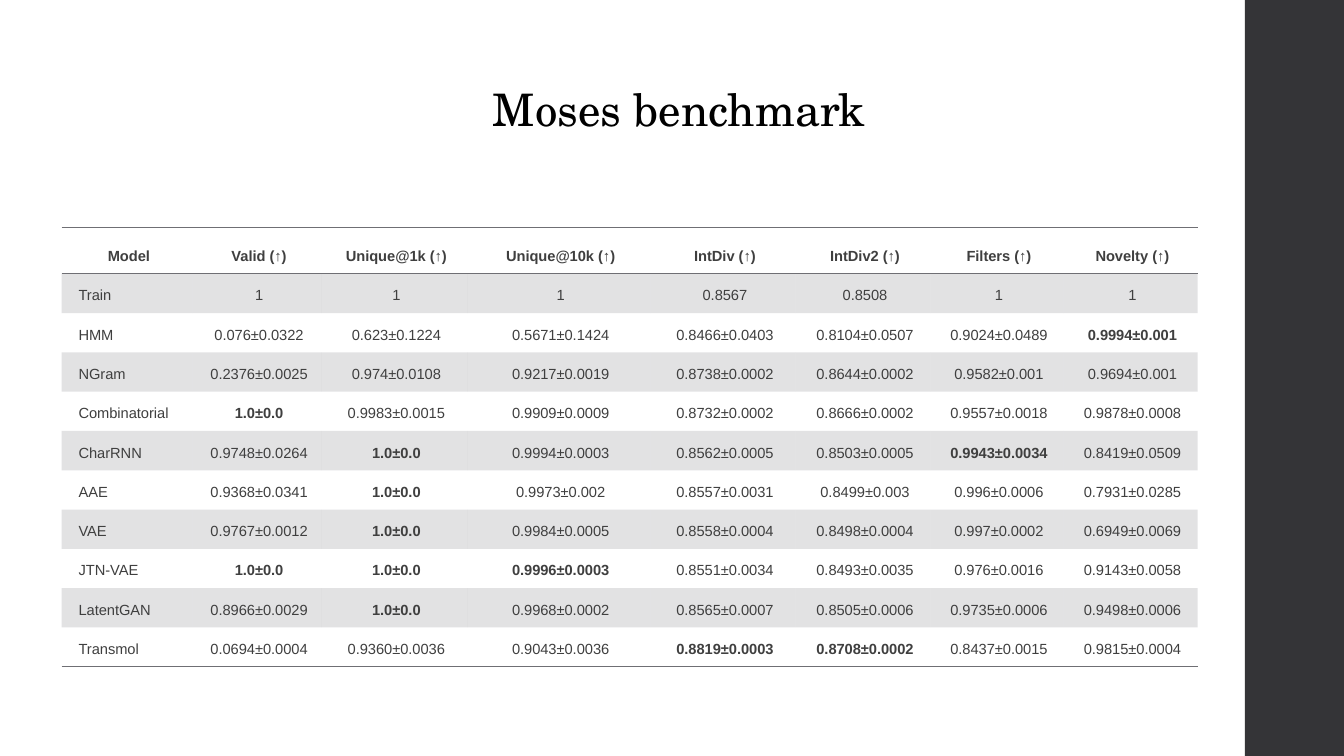
import lxml.etree
import pptx
import pptx.dml.color
import pptx.enum.shapes
import pptx.enum.text
import pptx.oxml.ns
import pptx.util

Cm = pptx.util.Cm
Pt = pptx.util.Pt
RGBColor = pptx.dml.color.RGBColor
PP_ALIGN = pptx.enum.text.PP_ALIGN
MSO_ANCHOR = pptx.enum.text.MSO_ANCHOR
qn = pptx.oxml.ns.qn

BLACK = RGBColor(0x00, 0x00, 0x00)
WHITE = RGBColor(0xFF, 0xFF, 0xFF)
CHARCOAL = RGBColor(0x34, 0x34, 0x37)
TEXT_GREY = RGBColor(0x3F, 0x3F, 0x3F)
RULE_GREY = RGBColor(0x6F, 0x6F, 0x74)
NO_STYLE_NO_GRID = "{2D5ABB26-0587-4C30-8999-92F81FD0307C}"

HEADINGS = ["Model", "Valid (↑)", "Unique@1k (↑)", "Unique@10k (↑)",
            "IntDiv (↑)", "IntDiv2 (↑)", "Filters (↑)", "Novelty (↑)"]
COLUMN_WIDTHS = [3.3, 3.26, 3.66, 4.62, 3.66, 3.4, 3.35, 3.38]

# A leading * marks a best score, set in bold
SCORES = [
    "Train 1 1 1 0.8567 0.8508 1 1",
    "HMM 0.076±0.0322 0.623±0.1224 0.5671±0.1424 0.8466±0.0403 0.8104±0.0507 0.9024±0.0489 *0.9994±0.001",
    "NGram 0.2376±0.0025 0.974±0.0108 0.9217±0.0019 0.8738±0.0002 0.8644±0.0002 0.9582±0.001 0.9694±0.001",
    "Combinatorial *1.0±0.0 0.9983±0.0015 0.9909±0.0009 0.8732±0.0002 0.8666±0.0002 0.9557±0.0018 0.9878±0.0008",
    "CharRNN 0.9748±0.0264 *1.0±0.0 0.9994±0.0003 0.8562±0.0005 0.8503±0.0005 *0.9943±0.0034 0.8419±0.0509",
    "AAE 0.9368±0.0341 *1.0±0.0 0.9973±0.002 0.8557±0.0031 0.8499±0.003 0.996±0.0006 0.7931±0.0285",
    "VAE 0.9767±0.0012 *1.0±0.0 0.9984±0.0005 0.8558±0.0004 0.8498±0.0004 0.997±0.0002 0.6949±0.0069",
    "JTN-VAE *1.0±0.0 *1.0±0.0 *0.9996±0.0003 0.8551±0.0034 0.8493±0.0035 0.976±0.0016 0.9143±0.0058",
    "LatentGAN 0.8966±0.0029 *1.0±0.0 0.9968±0.0002 0.8565±0.0007 0.8505±0.0006 0.9735±0.0006 0.9498±0.0006",
    "Transmol 0.0694±0.0004 0.9360±0.0036 0.9043±0.0036 *0.8819±0.0003 *0.8708±0.0002 0.8437±0.0015 0.9815±0.0004",
]


def write_text(frame, text, font="Arial", size=10.5, color=TEXT_GREY,
               bold=False, align=PP_ALIGN.CENTER, spacing=1.0):
    paragraph = frame.paragraphs[0]
    paragraph.alignment = align
    paragraph.line_spacing = spacing
    run = paragraph.add_run()
    run.text = text
    run.font.name = font
    run.font.size = Pt(size)
    run.font.bold = bold
    run.font.color.rgb = color


def add_rule(cell, edge):
    line = lxml.etree.Element(qn(f"a:{edge}"), w=str(Pt(1)))
    fill = lxml.etree.SubElement(line, qn("a:solidFill"))
    lxml.etree.SubElement(fill, qn("a:srgbClr"), val=str(RULE_GREY))
    cell._tc.get_or_add_tcPr().insert(0, line)


deck = pptx.Presentation()
deck.slide_width = Cm(33.87)
deck.slide_height = Cm(19.05)
slide = deck.slides.add_slide(deck.slide_layouts[6])
slide.background.fill.solid()
slide.background.fill.fore_color.rgb = WHITE

# Dark band on the right
side_band = slide.shapes.add_shape(pptx.enum.shapes.MSO_SHAPE.RECTANGLE,
                                   Cm(31.37), 0, Cm(2.5), deck.slide_height)
side_band.shadow.inherit = False
side_band.fill.solid()
side_band.fill.fore_color.rgb = CHARCOAL
side_band.line.fill.background()

# Title
title = slide.shapes.add_textbox(Cm(1.55), Cm(1.78), Cm(31.14), Cm(2.06)).text_frame
title.word_wrap = True
title.vertical_anchor = MSO_ANCHOR.MIDDLE
write_text(title, "Moses benchmark", font="TeX Gyre Schola", size=32,
           color=BLACK, spacing=0.9)

# Benchmark table
models = [line.split() for line in SCORES]
rows = [HEADINGS] + models
row_heights = [1.17] + [0.99] * len(models)
benchmark = slide.shapes.add_table(
    len(rows), len(HEADINGS), Cm(1.55), Cm(5.73),
    Cm(sum(COLUMN_WIDTHS)), Cm(sum(row_heights))).table
benchmark.horz_banding = False
benchmark._tbl.tblPr.find(qn("a:tableStyleId")).text = NO_STYLE_NO_GRID
for column, width in zip(benchmark.columns, COLUMN_WIDTHS):
    column.width = Cm(width)
for row, height in zip(benchmark.rows, row_heights):
    row.height = Cm(height)

for r, values in enumerate(rows):
    for c, value in enumerate(values):
        cell = benchmark.cell(r, c)
        cell.vertical_anchor = MSO_ANCHOR.BOTTOM
        cell.margin_left, cell.margin_right = Cm(0.43), Cm(0.33)
        cell.margin_top = cell.margin_bottom = Cm(0.23)
        is_name = r > 0 and c == 0
        write_text(cell.text_frame, value.lstrip("*"),
                   bold=r == 0 or value.startswith("*"),
                   align=PP_ALIGN.LEFT if is_name else PP_ALIGN.CENTER)

        # Every second row is tinted
        if r % 2:
            cell.fill.solid()
            cell.fill.fore_color.rgb = RULE_GREY
            tint = cell._tc.tcPr.find(".//" + qn("a:srgbClr"))
            lxml.etree.SubElement(tint, qn("a:alpha"), val="20000")
        else:
            cell.fill.background()

        # Rules around the header and under the last row
        if r in (0, len(models)):
            add_rule(cell, "lnB")
        if r == 0:
            add_rule(cell, "lnT")

deck.save("out.pptx")
